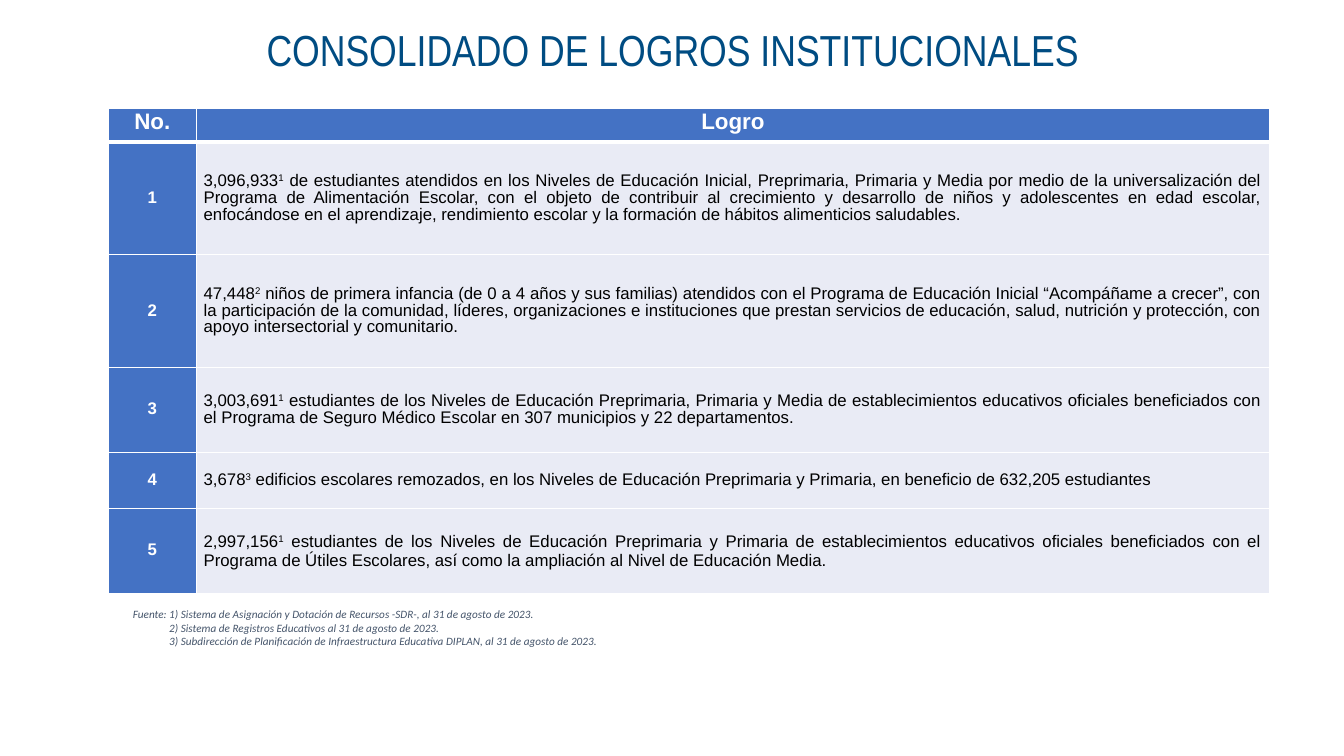
from lxml.etree import SubElement
from pptx import Presentation
from pptx.dml.color import RGBColor
from pptx.enum.text import MSO_ANCHOR, PP_ALIGN
from pptx.oxml.ns import qn
from pptx.util import Inches, Pt

NAVY = RGBColor(0x00, 0x4C, 0x82)
BLUE = RGBColor(0x44, 0x72, 0xC4)
PALE = RGBColor(0xE9, 0xEB, 0xF5)
SLATE = RGBColor(0x44, 0x54, 0x6A)
WHITE = RGBColor(0xFF, 0xFF, 0xFF)
BLACK = RGBColor(0x00, 0x00, 0x00)

ROW_UNIT = 3.73
ACHIEVEMENTS = [
    (4, "3,096,933", "1", " de estudiantes atendidos en los Niveles de Educación Inicial, Preprimaria, "
     "Primaria y Media por medio de la universalización del Programa de Alimentación Escolar, con el objeto "
     "de contribuir al crecimiento y desarrollo de niños y adolescentes en edad escolar, enfocándose en el "
     "aprendizaje, rendimiento escolar y la formación de hábitos alimenticios saludables."),
    (4, "47,448", "2", " niños de primera infancia (de 0 a 4 años y sus familias) atendidos con el Programa "
     "de Educación Inicial “Acompáñame a crecer”, con la participación de la comunidad, líderes, "
     "organizaciones e instituciones que prestan servicios de educación, salud, nutrición y protección, con "
     "apoyo intersectorial y comunitario."),
    (3, "3,003,691", "1", " estudiantes de los Niveles de Educación Preprimaria, Primaria y Media de "
     "establecimientos educativos oficiales beneficiados con el Programa de Seguro Médico Escolar en 307 "
     "municipios y 22 departamentos."),
    (2, "3,678", "3", " edificios escolares remozados, en los Niveles de Educación Preprimaria y Primaria, "
     "en beneficio de 632,205 estudiantes"),
    (3, "2,997,156", "1", " estudiantes de los Niveles de Educación Preprimaria y Primaria de "
     "establecimientos educativos oficiales beneficiados con el Programa de Útiles Escolares, así como la "
     "ampliación al Nivel de Educación Media."),
]
SOURCES = [
    "Fuente: 1) Sistema de Asignación y Dotación de Recursos -SDR-, al 31 de agosto de 2023.",
    "2) Sistema de Registros Educativos al 31 de agosto de 2023.",
    "3) Subdirección de Planificación de Infraestructura Educativa DIPLAN, al 31 de agosto de 2023.",
]


class Page:
    """Draws styled elements on one slide, with lengths in percent of its size."""

    def __init__(self, deck):
        self.deck = deck
        self.slide = deck.slides.add_slide(deck.slide_layouts[6])

    def across(self, percent):
        return round(self.deck.slide_width * percent / 100)

    def down(self, percent):
        return round(self.deck.slide_height * percent / 100)

    def place(self, left, top, width, height):
        return self.across(left), self.down(top), self.across(width), self.down(height)

    def style(self, para, font, size, color, bold=False, italic=False):
        para.font.name = font
        para.font.size = Pt(size)
        para.font.bold = bold
        para.font.italic = italic
        para.font.color.rgb = color

    def text(self, area, lines, font, size, color, align=PP_ALIGN.LEFT, italic=False, hang=0):
        frame = self.slide.shapes.add_textbox(*self.place(*area)).text_frame
        frame.word_wrap = True
        for index, line in enumerate(lines):
            para = frame.add_paragraph() if index else frame.paragraphs[0]
            para.text = line
            para.alignment = align
            if index and hang:
                para._p.get_or_add_pPr().set("marL", str(Inches(hang)))
            self.style(para, font, size, color, italic=italic)

    def borders(self, cell, top=1, bottom=1):
        properties = cell._tc.get_or_add_tcPr()
        for side, width in (("L", 1), ("R", 1), ("T", top), ("B", bottom)):
            line = SubElement(properties, qn(f"a:ln{side}"), w=str(Pt(width)))
            fill = SubElement(line, qn("a:solidFill"))
            SubElement(fill, qn("a:srgbClr"), val=str(WHITE))

    def cell(self, cell, spans, size, fill, color, align, bold, spacing=Pt(12), **edges):
        self.borders(cell, **edges)
        cell.fill.solid()
        cell.fill.fore_color.rgb = fill
        cell.vertical_anchor = MSO_ANCHOR.MIDDLE
        cell.margin_left = cell.margin_right = Inches(0.07)
        cell.margin_top = cell.margin_bottom = 0
        para = cell.text_frame.paragraphs[0]
        para.alignment = align
        if spacing:
            para.line_spacing = spacing
        self.style(para, "Arial", size, color, bold)
        for index, words in enumerate(spans):
            span = para.add_run()
            span.text = words
            if index == 1:
                span._r.get_or_add_rPr().set("baseline", "30000")

    def table(self, left, top, widths, header_height, headers, achievements):
        heights = [header_height] + [units * ROW_UNIT for units, *_ in achievements]
        area = self.place(left, top, sum(widths), sum(heights))
        table = self.slide.shapes.add_table(len(heights), len(widths), *area).table
        table.first_row = table.horz_banding = False
        for column, width in zip(table.columns, widths):
            column.width = self.across(width)
        for row, height in zip(table.rows, heights):
            row.height = self.down(height)
        for column, label in enumerate(headers):
            self.cell(table.cell(0, column), [label], 16, BLUE, WHITE, PP_ALIGN.CENTER, True, bottom=3)
        for number, (_, *spans) in enumerate(achievements, 1):
            edge = 3 if number == 1 else 1
            spacing = None if number == len(achievements) else Pt(12)
            self.cell(table.cell(number, 0), [str(number)], 12, BLUE, WHITE, PP_ALIGN.CENTER, True, top=edge)
            self.cell(table.cell(number, 1), spans, 12, PALE, BLACK, PP_ALIGN.JUSTIFY, False, spacing, top=edge)


def main():
    deck = Presentation()
    deck.slide_width, deck.slide_height = Inches(13.33), Inches(7.5)
    page = Page(deck)
    page.text((9.15, 79.73, 85.3, 8.53), SOURCES, "Calibri", 8, SLATE, italic=True, hang=0.36)
    page.text((14.85, 2.4, 70.37, 8.27), ["CONSOLIDADO DE LOGROS INSTITUCIONALES"],
              "Arial Narrow", 31, NAVY, PP_ALIGN.CENTER)
    page.table(8.03, 14.4, (6.6, 79.82), 4.4, ("No.", "Logro"), ACHIEVEMENTS)
    deck.save("out.pptx")


if __name__ == "__main__":
    main()
